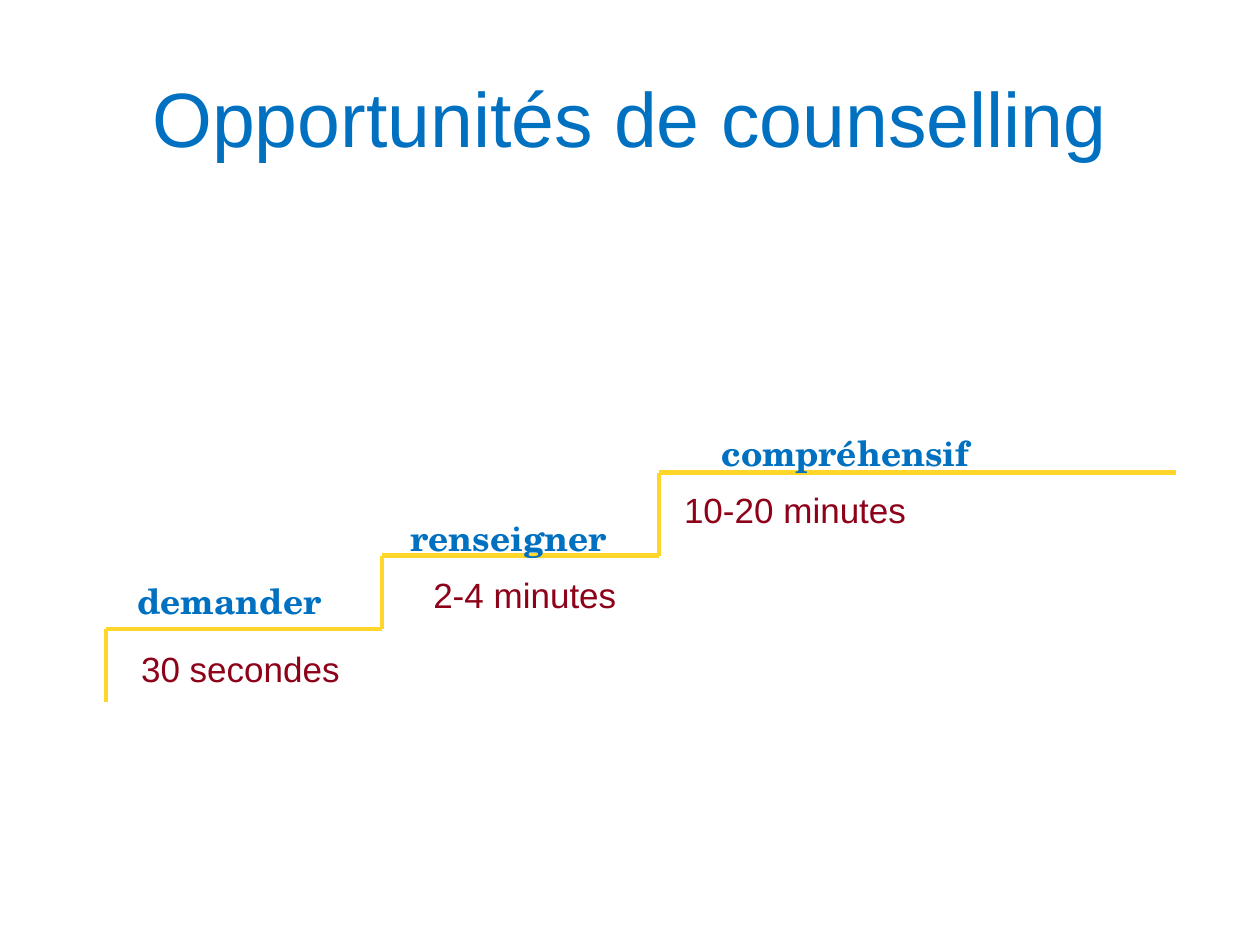
from dataclasses import dataclass
from typing import NamedTuple

from lxml.etree import SubElement
from pptx import Presentation
from pptx.dml.color import RGBColor
from pptx.enum.shapes import MSO_CONNECTOR
from pptx.enum.text import MSO_ANCHOR, PP_ALIGN
from pptx.oxml.ns import qn
from pptx.util import Pt


@dataclass(frozen=True)
class Theme:
    blue: RGBColor = RGBColor(0x00, 0x70, 0xC0)
    red: RGBColor = RGBColor(0x8D, 0x02, 0x19)
    yellow: RGBColor = RGBColor(0xFF, 0xD6, 0x29)
    sans: str = "Arial"
    serif: str = "TeX Gyre Schola"
    title_size: float = 44
    label_size: float = 20
    line_width: float = 2.5


class Box(NamedTuple):
    left: float
    top: float
    width: float
    height: float


class Step(NamedTuple):
    """One stair; its box spans the riser and tread, offsets start at its top left."""
    action: str
    duration: str
    box: Box
    action_offset: tuple
    duration_offset: tuple


THEME = Theme()
LABEL_HEIGHT = 31.5
STEPS = [
    Step("demander", "30 secondes", Box(60.5, 359.3, 157.8, 41.7), (10.8, -31.7), (13, 7.2)),
    Step("renseigner", "2-4 minutes", Box(218.3, 317.5, 158.2, 41.8), (9.2, -25.9), (22.2, 6.5)),
    Step("compréhensif", "10-20 minutes", Box(376.5, 270, 295.3, 47.5), (28.8, -27), (7.3, 5.8)),
]


def add_text(page, box, text, size, font, color, bold=False):
    frame = page.shapes.add_textbox(*map(Pt, box)).text_frame
    frame.word_wrap = True
    frame.text = text
    span = frame.paragraphs[0].runs[0]
    span.font.size = Pt(size)
    span.font.name = font
    span.font.bold = bold
    span.font.color.rgb = color
    return frame


def add_line(page, start, end):
    line = page.shapes.add_connector(MSO_CONNECTOR.STRAIGHT, *map(Pt, start + end))
    line.line.color.rgb = THEME.yellow
    line.line.width = Pt(THEME.line_width)
    SubElement(line._element.spPr, qn("a:effectLst"))


def add_title(page, box, text):
    frame = add_text(page, box, text, THEME.title_size, THEME.sans, THEME.blue)
    frame.vertical_anchor = MSO_ANCHOR.MIDDLE
    frame.paragraphs[0].alignment = PP_ALIGN.CENTER


def add_step(page, step):
    """Draw a riser and a tread, the action above and its duration below."""
    left, top, width, height = step.box
    add_line(page, (left, top + height), (left, top))
    add_line(page, (left, top), (left + width, top))
    labels = [
        (step.action, step.action_offset, THEME.serif, THEME.blue, True),
        (step.duration, step.duration_offset, THEME.sans, THEME.red, False),
    ]
    for text, (right, down), font, color, bold in labels:
        box = Box(left + right, top + down, width, LABEL_HEIGHT)
        add_text(page, box, text, THEME.label_size, font, color, bold)


def main():
    deck = Presentation()
    deck.slide_width, deck.slide_height = Pt(720), Pt(540)
    page = deck.slides.add_slide(deck.slide_layouts[6])
    add_title(page, Box(12, 21.6, 696, 90), "Opportunités de counselling")
    for step in STEPS:
        add_step(page, step)
    deck.save("out.pptx")


if __name__ == "__main__":
    main()
